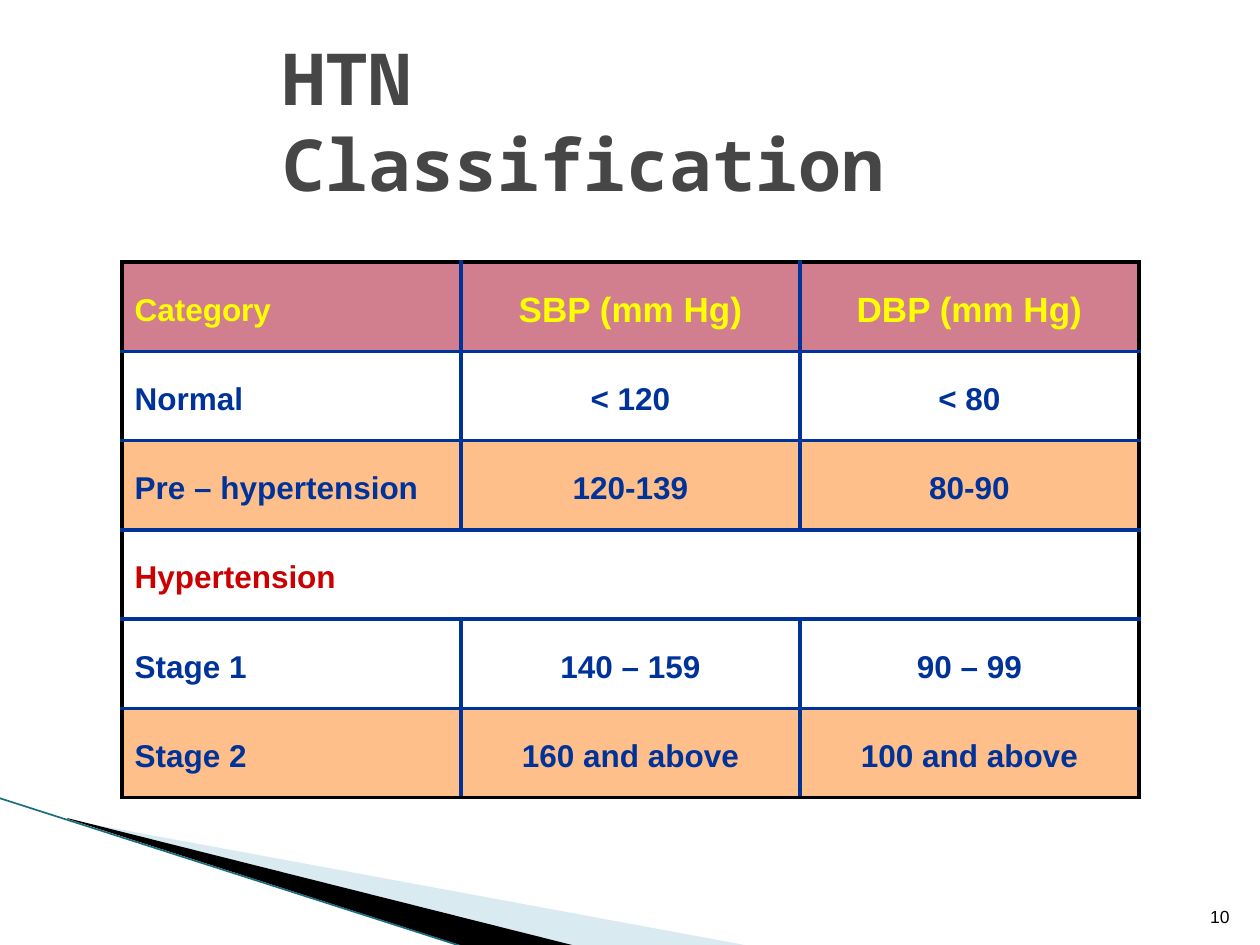
from dataclasses import dataclass

from lxml.etree import SubElement
from pptx import Presentation
from pptx.dml.color import RGBColor
from pptx.enum.shapes import MSO_CONNECTOR
from pptx.enum.text import MSO_ANCHOR, PP_ALIGN
from pptx.oxml import parse_xml
from pptx.oxml.ns import nsdecls, qn
from pptx.util import Pt

PX = 914400 // 126  # EMU per px


@dataclass(frozen=True)
class Theme:
    title: str = "464646"
    black: str = "000000"
    navy: str = "003399"
    red: str = "CC0000"
    yellow: str = "FFFF00"
    header_fill: str = "A50021"
    plain_fill: str = "FFFFFF"
    accent_fill: str = "FF8119"
    pale_wave: str = "A0CBDC"
    wave_edge: str = "1B6C80"
    title_font: str = "Noto Sans Mono"
    body_font: str = "Arial"
    title_size: int = 41
    heading_size: int = 20
    cell_size: int = 18
    number_size: int = 10
    border: float = 2.25


def write(frame, text, *, size, color, font, bold=False, align=PP_ALIGN.LEFT, spacing=None):
    paragraph = frame.paragraphs[0]
    paragraph.alignment = align
    paragraph.line_spacing = spacing
    run = paragraph.add_run()
    run.text = text
    run.font.size = Pt(size)
    run.font.bold = bold
    run.font.name = font
    run.font.color.rgb = RGBColor.from_string(color)


def paint(fill, owner, color, opacity=100):
    fill.solid()
    fill.fore_color.rgb = RGBColor.from_string(color)
    if opacity < 100:
        tone = owner.find(qn("a:solidFill")).find(qn("a:srgbClr"))
        SubElement(tone, qn("a:alpha")).set("val", str(opacity * 1000))


class SlideBuilder:
    def __init__(self, slide, theme):
        self.slide = slide
        self.theme = theme

    def text(self, box, text, *, anchor, **style):
        area = self.slide.shapes.add_textbox(*(v * PX for v in box))
        area.text_frame.word_wrap = True
        area.text_frame.vertical_anchor = anchor
        write(area.text_frame, text, **style)

    def outline(self, points, color, opacity=100):
        builder = self.slide.shapes.build_freeform(*points[0], scale=PX)
        builder.add_line_segments(points[1:], close=True)
        wave = builder.convert_to_shape()
        wave.shadow.inherit = False
        wave.line.fill.background()
        paint(wave.fill, wave.element.spPr, color, opacity)

    def line(self, start, end, color, width):
        edge = self.slide.shapes.add_connector(
            MSO_CONNECTOR.STRAIGHT, *(v * PX for v in start + end))
        edge.line.color.rgb = RGBColor.from_string(color)
        edge.line.width = Pt(width)
        SubElement(edge.element.spPr, qn("a:effectLst"))

    def borders(self, cell, colors):
        properties = cell._tc.get_or_add_tcPr()
        for index, (side, color) in enumerate(zip("LRTB", colors)):
            properties.insert(index, parse_xml(
                f'<a:ln{side} {nsdecls("a")} w="{Pt(self.theme.border)}">'
                f'<a:solidFill><a:srgbClr val="{color}"/></a:solidFill></a:ln{side}>'))

    def table(self, box, rows, fills, span_row):
        theme = self.theme
        count, width = len(rows), len(rows[0])
        table = self.slide.shapes.add_table(count, width, *(v * PX for v in box)).table
        table.first_row = table.horz_banding = False
        table.cell(span_row, 0).merge(table.cell(span_row, width - 1))
        for r, row in enumerate(rows):
            for c, text in enumerate(row):
                cell = table.cell(r, c)
                paint(cell.fill, cell._tc.tcPr, fills[r], 50)
                right_end = c == width - 1 or r == span_row
                outer = (c == 0, right_end, r == 0, r == count - 1)
                self.borders(cell, [theme.black if o else theme.navy for o in outer])
                if cell.is_spanned:
                    continue
                cell.vertical_anchor = MSO_ANCHOR.MIDDLE
                color = (theme.yellow if r == 0 else
                         theme.red if r == span_row else theme.navy)
                write(cell.text_frame, text, color=color, font=theme.body_font, bold=True,
                      size=theme.heading_size if r == 0 and c else theme.cell_size,
                      align=PP_ALIGN.CENTER if c else PP_ALIGN.LEFT, spacing=1.2)


def main():
    theme = Theme()
    deck = Presentation()
    deck.slide_width, deck.slide_height = 1260 * PX, 945 * PX
    page = SlideBuilder(deck.slides.add_slide(deck.slide_layouts[6]), theme)

    # Corner waves
    page.outline([(69, 820), (750, 946), (575, 946), (69, 819)], theme.pale_wave, 40)
    page.outline([(67, 818), (576, 946), (469, 948), (68, 819)], theme.black)
    page.line((-1, 798), (467, 948), theme.wave_edge, 0.95)

    # Title and page number
    page.text((270, 55, 721, 130), "HTN Classification", anchor=MSO_ANCHOR.MIDDLE,
              size=theme.title_size, color=theme.title, font=theme.title_font, bold=True)
    page.text((1192, 883, 50, 50), "10", anchor=MSO_ANCHOR.BOTTOM, align=PP_ALIGN.RIGHT,
              size=theme.number_size, color=theme.black, font=theme.body_font)

    # Blood pressure categories
    categories = [
        ("Category", "SBP (mm Hg)", "DBP (mm Hg)"),
        ("Normal", "< 120", "< 80"),
        ("Pre – hypertension", "120-139", "80-90"),
        ("Hypertension", "", ""),
        ("Stage 1", "140 – 159", "90 – 99"),
        ("Stage 2", "160 and above", "100 and above"),
    ]
    fills = [theme.header_fill, theme.plain_fill, theme.accent_fill,
             theme.plain_fill, theme.plain_fill, theme.accent_fill]
    page.table((122, 262, 1017, 536), categories, fills, span_row=3)

    deck.save("out.pptx")


if __name__ == "__main__":
    main()
